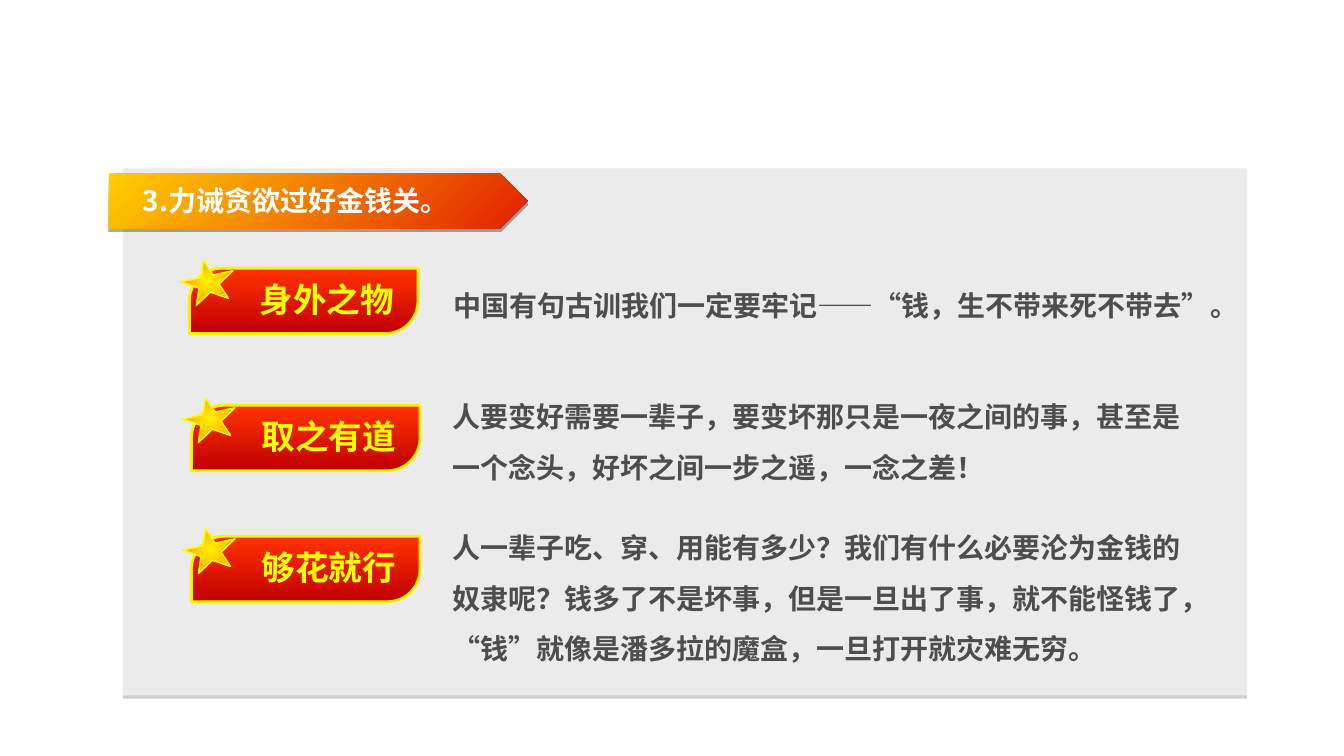
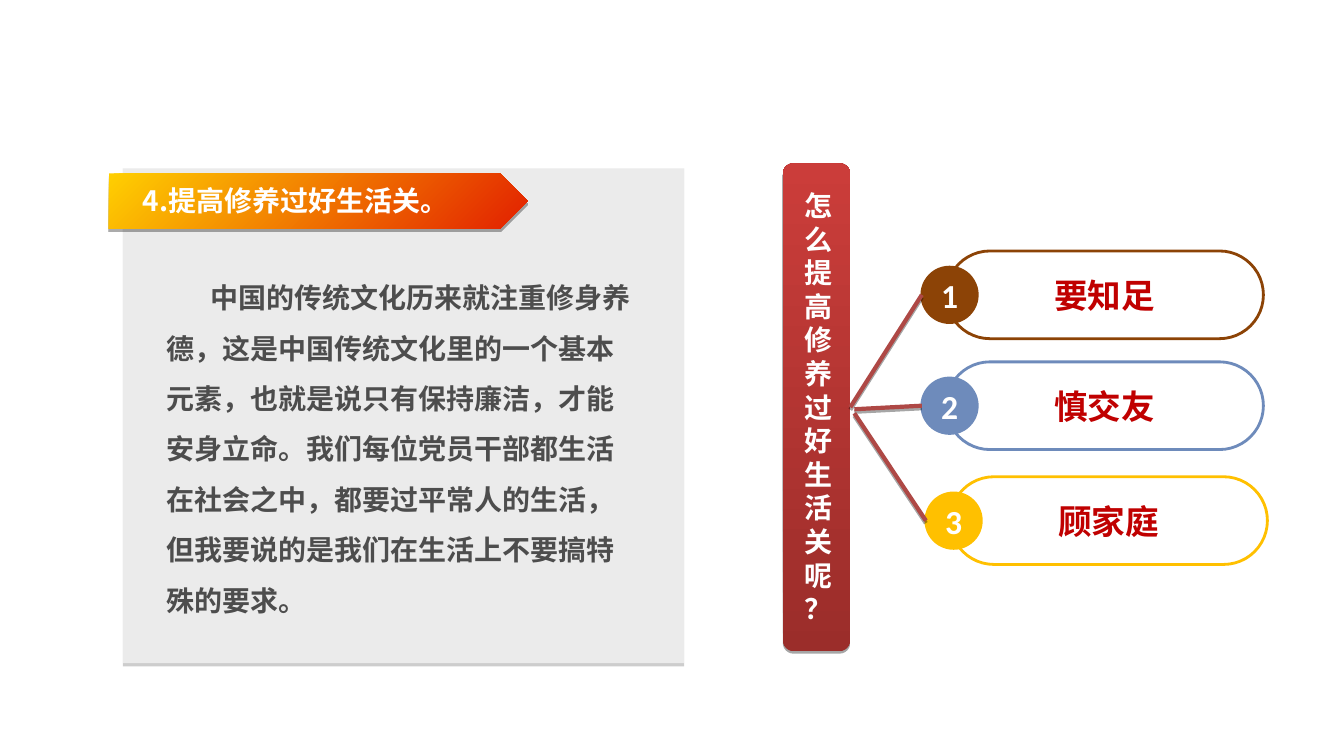
from lxml import etree
from pptx import Presentation
from pptx import util as u
from pptx.dml.color import RGBColor
from pptx.enum import lang, shapes, text
from pptx.oxml.ns import qn

Inches, Pt = u.Inches, u.Pt
SHAPE = shapes.MSO_SHAPE
CENTER = text.PP_ALIGN.CENTER

# Shared look
CJK, LATIN = "Noto Sans CJK SC", "Calibri"
WHITE = RGBColor(0xFF, 0xFF, 0xFF)
GREY = RGBColor(0x4D, 0x4D, 0x4D)
YELLOW = RGBColor(0xFF, 0xFF, 0x00)
DARK_RED = RGBColor(0xC0, 0x00, 0x00)
LINK_RED = RGBColor(0xAE, 0x48, 0x45)
FLAG_EDGE = RGBColor(0xFF, 0xF2, 0x00)
BROWN = RGBColor(0x8C, 0x43, 0x06)
BLUE = RGBColor(0x6E, 0x8B, 0xBB)
GOLD = RGBColor(0xFF, 0xC0, 0x00)
BANNER_GRAD = (RGBColor(0xFF, 0xCF, 0x01), RGBColor(0xE2, 0x20, 0x00))
FLAG_GRAD = (RGBColor(0xFF, 0x33, 0x00), DARK_RED)
STAR_GRAD = (FLAG_EDGE, RGBColor(0xFF, 0x7A, 0x00))
BAR_GRAD = (RGBColor(0x9B, 0x2D, 0x2A), RGBColor(0xCB, 0x3D, 0x3A))


def add_el(parent, tag, **attrs):
    el = etree.SubElement(parent, qn(tag))
    for name, value in attrs.items():
        el.set(name, str(value))
    return el


def add_shadow(effects, dist, alpha):
    """Sharp black shadow straight below."""
    shadow = add_el(effects, "a:outerShdw", blurRad=0, dist=Pt(dist),
                    dir=5400000, algn="t", rotWithShape=0)
    color = add_el(shadow, "a:srgbClr", val="000000")
    add_el(color, "a:alpha", val=alpha * 1000)


def fill_gradient(sp, colors, angle=None):
    """Linear gradient at a counter-clockwise angle, or radial without one."""
    sp.fill.gradient()
    for stop, color in zip(sp.fill.gradient_stops, colors):
        stop.color.rgb = color
    if angle is not None:
        sp.fill.gradient_angle = angle
        return
    grad = sp._element.spPr.find(qn("a:gradFill"))
    grad.remove(grad.find(qn("a:lin")))
    radial = add_el(grad, "a:path", path="circle")
    add_el(radial, "a:fillToRect", l=50000, t=50000, r=50000, b=50000)


def add_shape(s, kind, box, fill=None, line=None, width=2, adj=(), shadow=None):
    sp = s.shapes.add_shape(kind, *map(Inches, box))
    for i, value in enumerate(adj):
        sp.adjustments[i] = value
    if fill is not None:
        sp.fill.solid()
        sp.fill.fore_color.rgb = fill
    if line is None:
        sp.line.fill.background()
    else:
        sp.line.color.rgb = line
        sp.line.width = Pt(width)
    sp.shadow.inherit = False
    if shadow:
        add_shadow(sp._element.spPr.find(qn("a:effectLst")), *shadow)
    return sp


def set_text(sp, words, size=20, color=GREY, font=CJK, align=None, spacing=None,
             indent=0, shadow=False):
    p = sp.text_frame.paragraphs[0]
    if align is not None:
        p.alignment = align
    if spacing:
        p.line_spacing = spacing
    if indent:
        p._p.get_or_add_pPr().set("indent", str(Inches(indent)))
    r = p.add_run()
    r.text = words
    r.font.size, r.font.bold, r.font.name = Pt(size), True, font
    r.font.color.rgb = color
    r.font.language_id = lang.MSO_LANGUAGE_ID.SIMPLIFIED_CHINESE
    rPr = r._r.get_or_add_rPr()
    add_el(rPr, "a:ea", typeface=font)
    if shadow:
        effects = etree.Element(qn("a:effectLst"))
        rPr.find(qn("a:latin")).addprevious(effects)
        add_shadow(effects, 2.2, 32)


def add_text(s, words, box, **style):
    sp = s.shapes.add_textbox(*map(Inches, box))
    sp.text_frame.word_wrap = True
    sp.text_frame.auto_size = text.MSO_AUTO_SIZE.SHAPE_TO_FIT_TEXT
    set_text(sp, words, **style)


def add_panel(s, width, height, title):
    """Translucent panel with the arrow banner over its top left corner."""
    panel = add_shape(s, SHAPE.RECTANGLE, (1.22, 1.64, width, height), WHITE,
                      shadow=(2.2, 32))
    color = panel._element.spPr.find(qn("a:solidFill"))[0]
    add_el(color, "a:alpha", val=60000)
    banner = add_shape(s, SHAPE.PENTAGON, (1.08, 1.72, 4.16, 0.55),
                       shadow=(2.2, 32))
    fill_gradient(banner, BANNER_GRAD, 315)
    add_text(s, title, (0.58, 1.81, 4.71, 0.4), color=WHITE, align=CENTER,
             spacing=0.9, shadow=True)


def add_flag(s, x, y, label):
    """Red label with a tilted star on its corner."""
    flag = add_shape(s, SHAPE.ROUND_2_DIAG_RECTANGLE, (x, y, 2.27, 0.65),
                     line=FLAG_EDGE, adj=(0.5, 0))
    fill_gradient(flag, FLAG_GRAD, 270)
    star = add_shape(s, SHAPE.STAR_5_POINT, (x - 0.08, y - 0.08, 0.53, 0.42),
                     line=YELLOW, width=1)
    star.rotation = 347.8
    fill_gradient(star, STAR_GRAD)
    add_text(s, label, (x + 0.38, y + 0.06, 1.97, 0.51), size=24, color=YELLOW,
             align=CENTER)


def add_numbered_pill(s, x, y, number, label, color):
    pill = add_shape(s, SHAPE.ROUNDED_RECTANGLE, (x + 0.24, y, 3.15, 0.87),
                     WHITE, color, adj=(0.5,))
    set_text(pill, label, size=24, color=DARK_RED, align=CENTER)
    dot = add_shape(s, SHAPE.OVAL, (x, y + 0.16, 0.55, 0.55), color, color)
    tf = dot.text_frame
    tf.margin_left = tf.margin_right = tf.margin_top = tf.margin_bottom = 0
    set_text(dot, str(number), size=24, color=WHITE, font=LATIN, align=CENTER)


def add_link(s, start, end):
    link = s.shapes.add_connector(shapes.MSO_CONNECTOR.STRAIGHT,
                                  *map(Inches, start + end))
    link.line.color.rgb = LINK_RED
    link.line.width = Pt(3)
    add_shadow(add_el(link._element.spPr, "a:effectLst"), 1.8, 35)
    return link


def build_money(s):
    add_panel(s, 11.16, 5.26, "3.力诫贪欲过好金钱关。")
    # Label position, label, text box, text
    rows = [
        (1.88, 2.66, "身外之物", (4.4, 2.65, 8.93, 0.55),
         "中国有句古训我们一定要牢记——“钱，生不带来死不带去”。"),
        (1.9, 4.02, "取之有道", (4.39, 3.75, 7.6, 1.11),
         "人要变好需要一辈子，要变坏那只是一夜之间的事，甚至是一个念头，"
         "好坏之间一步之遥，一念之差！"),
        (1.9, 5.32, "够花就行", (4.39, 5.05, 7.56, 1.62),
         "人一辈子吃、穿、用能有多少？我们有什么必要沦为金钱的奴隶呢？"
         "钱多了不是坏事，但是一旦出了事，就不能怪钱了，“钱”就像是潘多拉的魔盒，"
         "一旦打开就灾难无穷。"),
    ]
    for x, y, label, box, words in rows:
        add_flag(s, x, y, label)
        add_text(s, words, box, spacing=1.5)


def build_life(s):
    # Question bar
    bar = add_shape(s, SHAPE.ROUNDED_RECTANGLE, (7.77, 1.62, 0.67, 4.84),
                    adj=(0.16,), shadow=(1.8, 35))
    fill_gradient(bar, BAR_GRAD, 90)
    add_text(s, "怎么提高修养过好生活关呢？", (7.89, 1.82, 0.32, 4.48), color=WHITE)

    # Text panel
    add_panel(s, 5.57, 4.94, "4.提高修养过好生活关。")
    add_text(s, "中国的传统文化历来就注重修身养德，这是中国传统文化里的一个基本元素，"
             "也就是说只有保持廉洁，才能安身立命。我们每位党员干部都生活在社会之中，"
             "都要过平常人的生活，但我要说的是我们在生活上不要搞特殊的要求。",
             (1.55, 2.57, 4.88, 3.63), spacing=1.5, indent=0.44)

    # Answers, each linked to the bar
    answers = [
        (9.15, 2.49, "要知足", BROWN, (8.44, 4.04)),
        (9.15, 3.59, "慎交友", BLUE, (8.48, 4.06)),
        (9.19, 4.73, "顾家庭", GOLD, (8.48, 4.1)),
    ]
    links = []
    for number, (x, y, label, color, start) in enumerate(answers, 1):
        add_numbered_pill(s, x, y, number, label, color)
        links.append(add_link(s, start, (x, y + 0.435)))
    links[0].begin_connect(bar, 3)


def main():
    prs = Presentation()
    prs.slide_width, prs.slide_height = Inches(13.34), Inches(7.5)
    for build in (build_money, build_life):
        build(prs.slides.add_slide(prs.slide_layouts[6]))
    prs.save("out.pptx")


if __name__ == "__main__":
    main()
